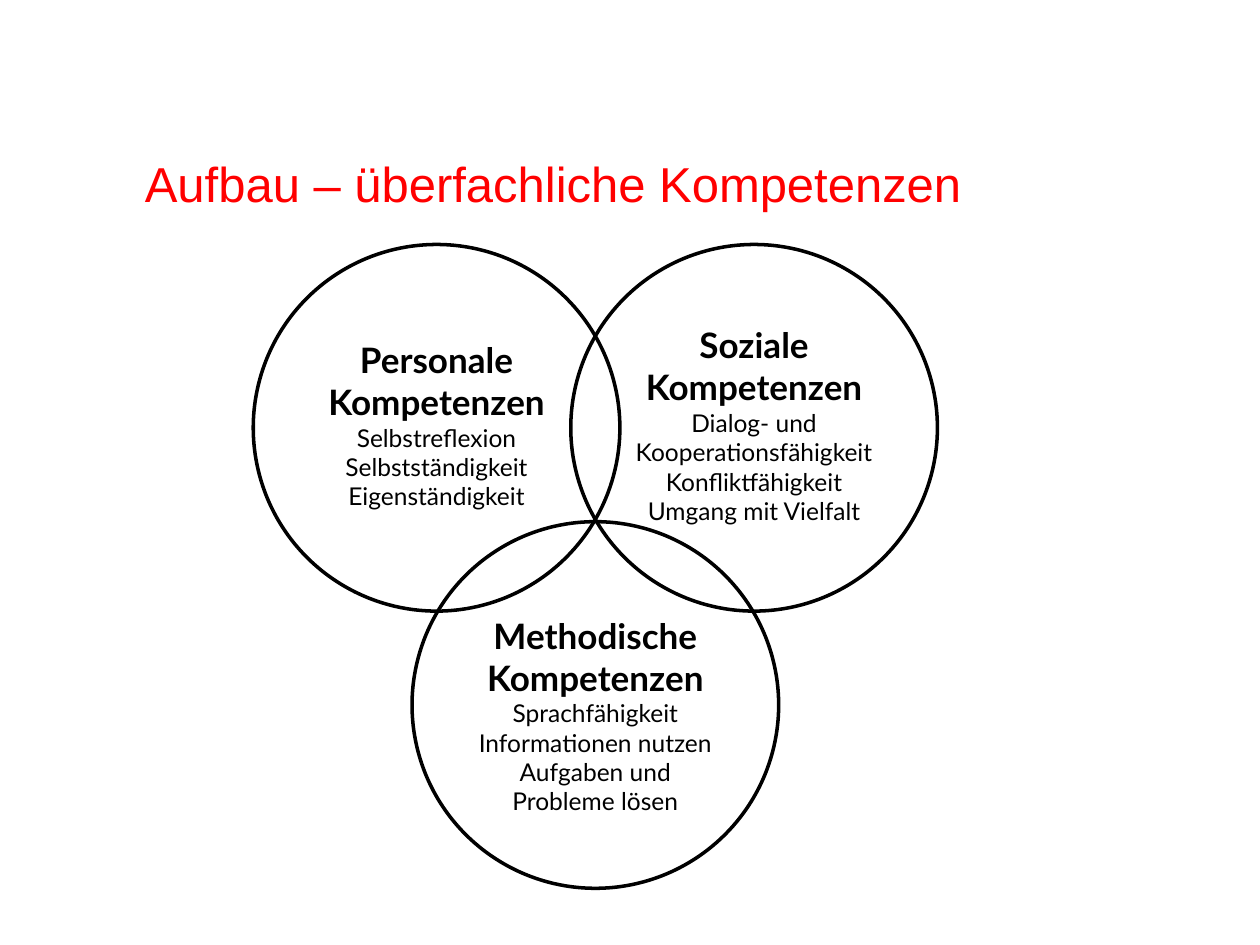
from pptx import Presentation
from pptx.dml.color import RGBColor
from pptx.enum.shapes import MSO_SHAPE
from pptx.enum.text import MSO_ANCHOR, PP_ALIGN
from pptx.util import Inches, Pt

RED = RGBColor(0xFF, 0x00, 0x00)
BLACK = RGBColor(0x00, 0x00, 0x00)

TITLE = "Aufbau – überfachliche Kompetenzen"
CIRCLES = [
    {"col": 0, "row": 0, "insets": (0.1, 0, 0.1, 0.05),
     "heads": ["Personale Kompetenzen"],
     "items": ["Selbstreflexion", "Selbstständigkeit", "Eigenständigkeit"]},
    {"col": 2, "row": 0, "insets": (0.08, 0, 0.08, 0.05),
     "heads": ["Soziale Kompetenzen"],
     "items": ["Dialog- und Kooperationsfähigkeit", "Konfliktfähigkeit",
               "Umgang mit Vielfalt"]},
    {"col": 1, "row": 1, "insets": (0.1, 0.16, 0.1, 0),
     "heads": ["Methodische", "Kompetenzen"],
     "items": ["Sprachfähigkeit", "Informationen nutzen",
               "Aufgaben und Probleme lösen"]},
]
LEFT, TOP = 2.01, 1.94
DIAMETER = 2.91
COL_STEP, ROW_STEP = 1.26, 2.2


def set_insets(tf, insets):
    (tf.margin_left, tf.margin_top,
     tf.margin_right, tf.margin_bottom) = map(Inches, insets)


def add_run(p, text, font, size, color, bold=False):
    r = p.add_run()
    r.text = text
    r.font.name = font
    r.font.size = Pt(size)
    r.font.bold = bold
    r.font.color.rgb = color


def add_title(s):
    sp = s.shapes.title
    sp.left, sp.top, sp.width, sp.height = map(Inches, (1.05, 1.13, 8.51, 0.73))
    tf = sp.text_frame
    tf.word_wrap = True
    tf.vertical_anchor = MSO_ANCHOR.MIDDLE
    set_insets(tf, (0.1, 0, 0.1, 0.08))
    p = tf.paragraphs[0]
    p.alignment = PP_ALIGN.LEFT
    add_run(p, TITLE, "Arial", 28, RED)


def add_circle(s, circle):
    sp = s.shapes.add_shape(
        MSO_SHAPE.OVAL,
        Inches(LEFT + circle["col"] * COL_STEP),
        Inches(TOP + circle["row"] * ROW_STEP),
        Inches(DIAMETER), Inches(DIAMETER))
    sp.shadow.inherit = False
    sp.fill.background()
    sp.line.color.rgb = BLACK
    sp.line.width = Pt(2)
    tf = sp.text_frame
    tf.word_wrap = True
    tf.vertical_anchor = MSO_ANCHOR.MIDDLE
    set_insets(tf, circle["insets"])
    lines = [(text, 20, True) for text in circle["heads"]]
    lines += [(text, 14, False) for text in circle["items"]]
    for i, (text, size, bold) in enumerate(lines):
        p = tf.add_paragraph() if i else tf.paragraphs[0]
        p.alignment = PP_ALIGN.CENTER
        add_run(p, text, "Lato", size, BLACK, bold)


def main():
    prs = Presentation()
    prs.slide_width, prs.slide_height = Inches(10), Inches(7.5)
    s = prs.slides.add_slide(prs.slide_layouts[5])
    add_title(s)
    for circle in CIRCLES:
        add_circle(s, circle)
    prs.save("out.pptx")


if __name__ == "__main__":
    main()
